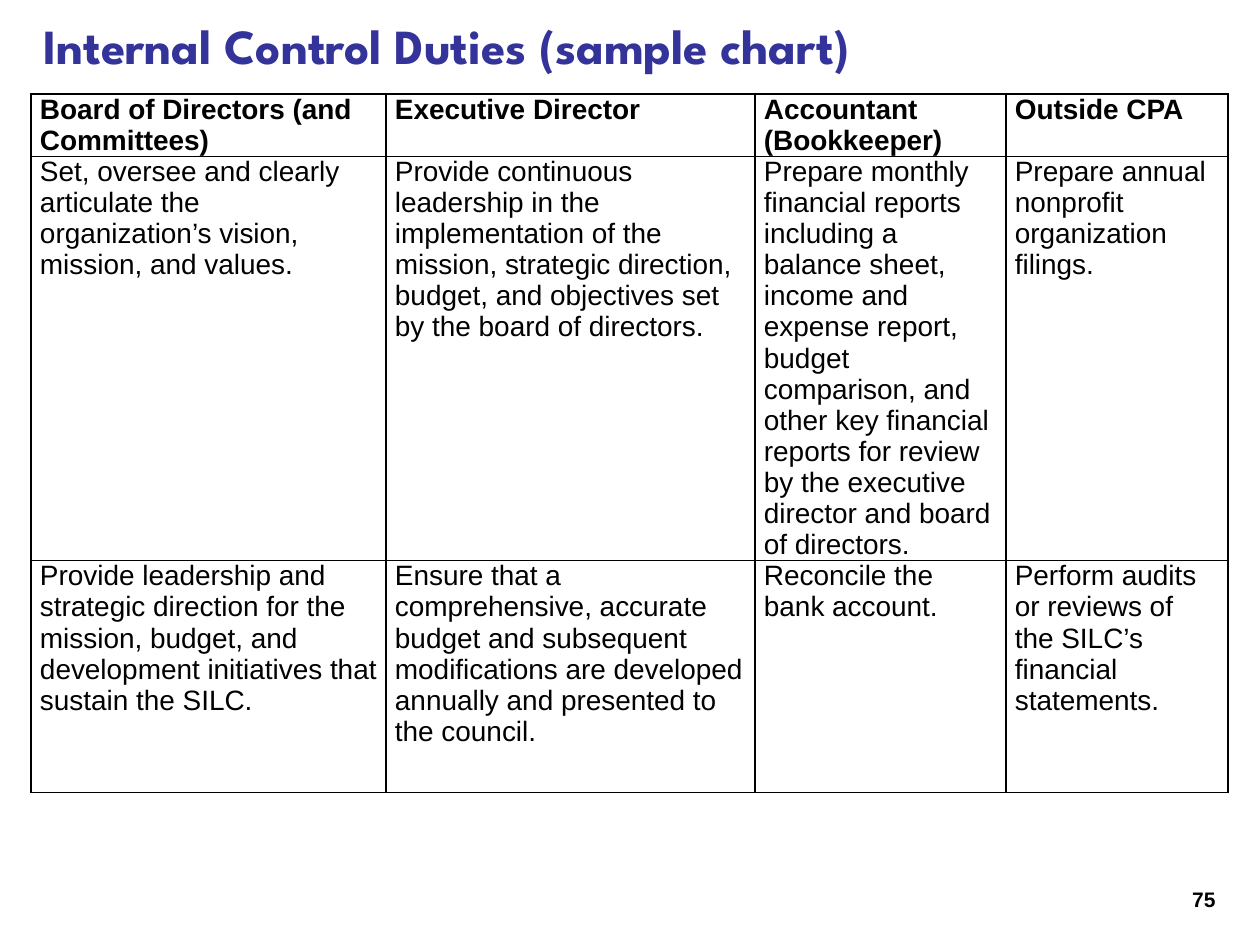
from lxml import etree
from pptx import Presentation, util as u
from pptx.dml.color import RGBColor
from pptx.enum import text
from pptx.oxml.ns import qn

PX = 914400 // 126
C = {"title": "333399", "ink": "000000"}
COLS = [355, 369, 251, 222]
ROWS = [62, 404, 232]
DUTIES = [
    ["Board of Directors (and Committees)", "Executive Director",
     "Accountant (Bookkeeper)", "Outside CPA"],
    ["Set, oversee and clearly articulate the organization’s vision, mission, and values.",
     "Provide continuous leadership in the implementation of the mission, strategic "
     "direction, budget, and objectives set by the board of directors.",
     "Prepare monthly financial reports including a balance sheet, income and expense "
     "report, budget comparison, and other key financial reports for review by the "
     "executive director and board of directors.",
     "Prepare annual nonprofit organization filings."],
    ["Provide leadership and strategic direction for the mission, budget, and "
     "development initiatives that sustain the SILC.",
     "Ensure that a comprehensive, accurate budget and subsequent modifications are "
     "developed annually and presented to the council.",
     "Reconcile the bank account.",
     "Perform audits or reviews of the SILC’s financial statements."],
]


def style(p, size, name, color, bold, align=text.PP_ALIGN.LEFT):
    p.alignment = align
    f = p.font
    f.size, f.name, f.bold = u.Pt(size), name, bold
    f.color.rgb = RGBColor.from_string(C[color])


def add_borders(cell):
    tcPr = cell._tc.get_or_add_tcPr()
    for i, side in enumerate(("lnL", "lnR", "lnT", "lnB")):
        ln = etree.Element(qn("a:" + side), w=str(u.Pt(1)))
        fill = etree.SubElement(ln, qn("a:solidFill"))
        etree.SubElement(fill, qn("a:srgbClr"), val=C["ink"])
        tcPr.insert(i, ln)


prs = Presentation()
prs.slide_width, prs.slide_height = u.Inches(10), u.Inches(7.5)
s = prs.slides.add_slide(prs.slide_layouts[5])

title = s.shapes.title
title.left, title.top, title.width, title.height = [v * PX for v in (31, -10, 1113, 110)]
tf = title.text_frame
tf.text = "Internal Control Duties (sample chart)"
tf.vertical_anchor = text.MSO_ANCHOR.MIDDLE
style(tf.paragraphs[0], 28, "League Spartan", "title", True)

gf = s.shapes.add_table(len(ROWS), len(COLS), 31 * PX, 94 * PX,
                        sum(COLS) * PX, sum(ROWS) * PX)
table = gf.table
table.first_row = table.horz_banding = False
for col, w in zip(table.columns, COLS):
    col.width = w * PX
for r, (row, h) in enumerate(zip(table.rows, ROWS)):
    row.height = h * PX
    for cell, duty in zip(row.cells, DUTIES[r]):
        cell.text = duty
        cell.margin_left = cell.margin_right = 9 * PX
        cell.margin_top = cell.margin_bottom = 0
        cell.fill.background()
        add_borders(cell)
        style(cell.text_frame.paragraphs[0], 16, "Arial", "ink", r == 0)

number = s.shapes.add_textbox(1144 * PX, 880 * PX, 84 * PX, 34 * PX)
tf = number.text_frame
tf.word_wrap = True
tf.text = "75"
style(tf.paragraphs[0], 12, "Arial", "ink", True, text.PP_ALIGN.RIGHT)

prs.save("out.pptx")
